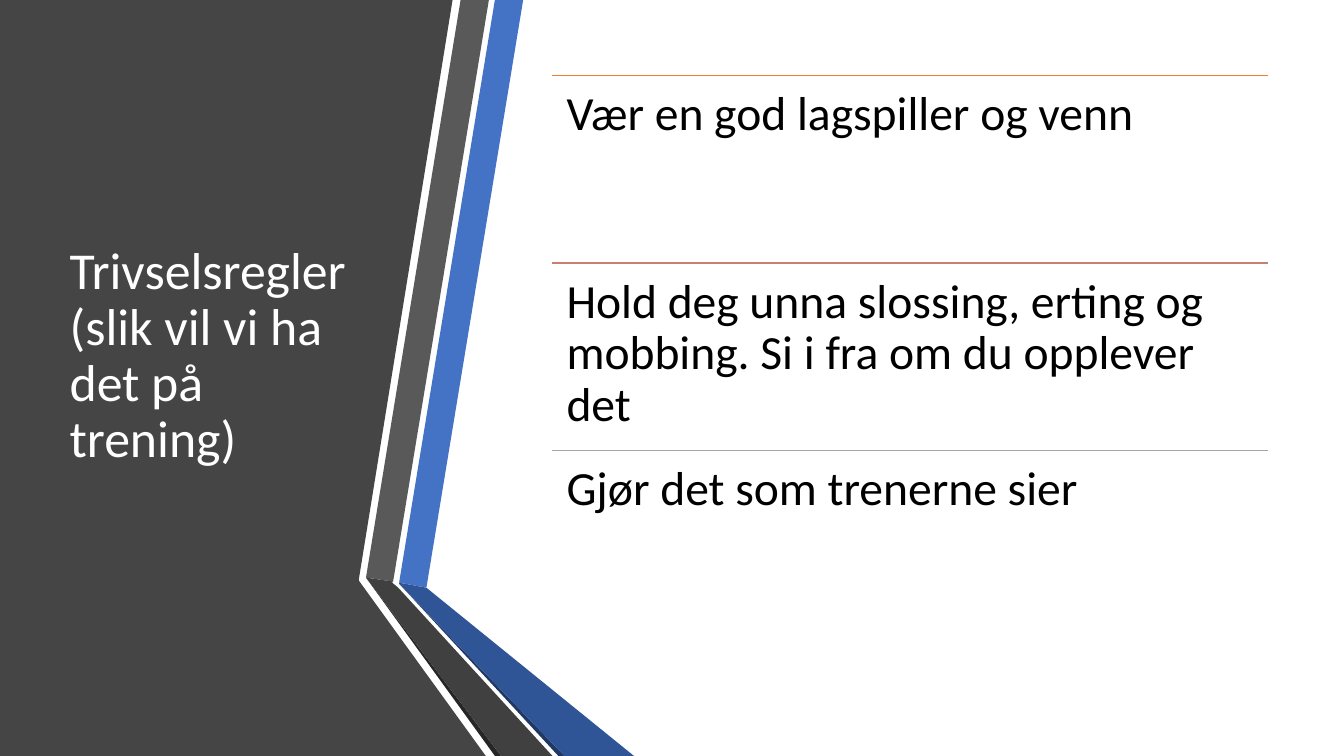
"""Build a slide with the rules for a pleasant training session."""
from lxml import etree
from pptx import Presentation
from pptx.dml.color import RGBColor
from pptx.enum.shapes import MSO_CONNECTOR
from pptx.enum.text import MSO_ANCHOR, MSO_AUTO_SIZE, PP_ALIGN
from pptx.oxml.ns import qn
from pptx.util import Pt

STRAIGHT = MSO_CONNECTOR.STRAIGHT
MIDDLE = MSO_ANCHOR.MIDDLE
TOP = MSO_ANCHOR.TOP
LEFT = PP_ALIGN.LEFT
NO_AUTOFIT = MSO_AUTO_SIZE.NONE

FONT = "Calibri"
TITLE = "Trivselsregler (slik vil vi ha det på trening)"
RULES = [
    ("Vær en god lagspiller og venn", "ED7D31"),
    ("Hold deg unna slossing, erting og mobbing. Si i fra om du opplever det", "C48170"),
    ("Gjør det som trenerne sier", "A5A5A5"),
]
RULES_LEFT, RULES_TOP, RULES_WIDTH, RULE_HEIGHT = 394.6, 54, 511.2, 133.9
RULE_INSET = 10.08

PANEL_AND_RIBBONS = [
    ("454545", [(0, 0), (323.3, 0), (256.3, 414), (256.3, 414.7), (347, 540), (0, 540)]),
    ("4472C4", [(285.1, 416.2), (304.6, 419.8), (373.7, 0), (353.5, 0)]),
    ("595959", [(349.2, 0), (329, 0), (261.4, 412.6), (280.8, 415.4)]),
    ("262626", [(261.4, 412.6), (353.5, 540), (357.8, 540)]),
    ("203864", [(285.1, 416.9), (398.9, 540), (403.2, 540)]),
    ("2F5597", [(285.1, 416.2), (285.1, 416.9), (403.2, 540), (452.9, 540), (304.6, 419.8)]),
    ("404040", [(394.6, 540), (284.4, 419.8), (280.1, 416.2), (280.8, 415.4),
                (261.4, 412.6), (357.8, 540)]),
]


def color(hex_value):
    """Return the colour for a hex string."""
    return RGBColor.from_string(hex_value)


def add_polygon(slide, fill, corners):
    """Add a closed, filled outline through the corners."""
    points = [(Pt(x), Pt(y)) for x, y in corners]
    builder = slide.shapes.build_freeform(*points[0])
    builder.add_line_segments(points[1:], close=True)
    shape = builder.convert_to_shape()
    shape.shadow.inherit = False
    shape.fill.solid()
    shape.fill.fore_color.rgb = color(fill)
    shape.line.fill.background()


def write_text(shape, text, size, text_color, anchor):
    """Write one left-aligned paragraph into the shape."""
    frame = shape.text_frame
    frame.text = text
    frame.word_wrap = True
    frame.auto_size = NO_AUTOFIT
    frame.vertical_anchor = anchor
    paragraph = frame.paragraphs[0]
    paragraph.alignment = LEFT
    paragraph.line_spacing = 0.9
    font = paragraph.runs[0].font
    font.name = FONT
    font.size = Pt(size)
    font.color.rgb = color(text_color)


def set_title(slide):
    """Place and format the title on the dark panel."""
    title = slide.shapes.title
    title.left, title.top, title.width, title.height = Pt(42.5), Pt(54), Pt(218.9), Pt(401.8)
    write_text(title, TITLE, 37, "FFFFFF", MIDDLE)


def add_divider(slide, top, line_color):
    """Add the thin line above a rule."""
    right = RULES_LEFT + RULES_WIDTH
    line = slide.shapes.add_connector(STRAIGHT, Pt(RULES_LEFT), Pt(top), Pt(right), Pt(top))
    line.line.color.rgb = color(line_color)
    line.line.width = Pt(1)
    etree.SubElement(line._element.spPr, qn("a:effectLst"))


def add_rule(slide, top, text):
    """Add the text of one rule."""
    box = slide.shapes.add_textbox(Pt(RULES_LEFT), Pt(top), Pt(RULES_WIDTH), Pt(RULE_HEIGHT))
    frame = box.text_frame
    frame.margin_left = frame.margin_right = Pt(RULE_INSET)
    frame.margin_top = frame.margin_bottom = Pt(RULE_INSET)
    write_text(box, text, 34, "000000", TOP)


def main():
    """Build and save the presentation."""
    presentation = Presentation()
    presentation.slide_width, presentation.slide_height = Pt(960), Pt(540)
    slide = presentation.slides.add_slide(presentation.slide_layouts.get_by_name("Title Only"))
    for fill, corners in PANEL_AND_RIBBONS:
        add_polygon(slide, fill, corners)
    set_title(slide)
    title_element = slide.shapes.title._element
    title_element.getparent().append(title_element)
    for index, (text, line_color) in enumerate(RULES):
        top = RULES_TOP + index * RULE_HEIGHT
        add_divider(slide, top, line_color)
        add_rule(slide, top, text)
    presentation.save("out.pptx")


if __name__ == "__main__":
    main()
